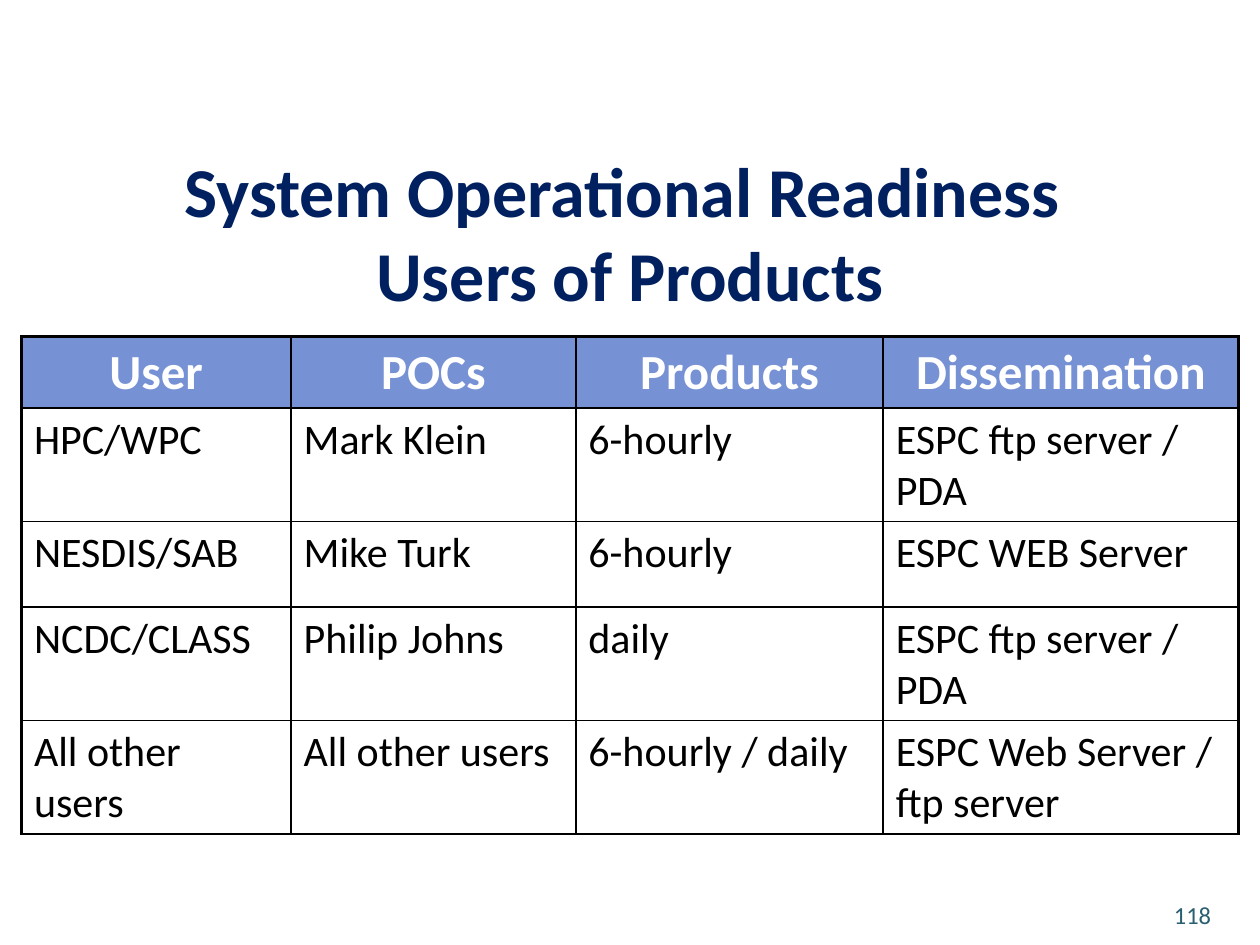
from dataclasses import dataclass

from lxml.etree import SubElement
from pptx import Presentation
from pptx.dml.color import RGBColor as RGB
from pptx.enum.text import MSO_ANCHOR as ANCHOR, PP_ALIGN as ALIGN
from pptx.oxml.ns import qn
from pptx.util import Inches, Pt


@dataclass(frozen=True)
class Theme:
    font: str = "Calibri"
    title: str = "002060"
    header_fill: str = "7691D4"
    header_text: str = "FFFFFF"
    body_text: str = "000000"
    border: str = "000000"
    number: str = "295F71"
    title_size: int = 40
    header_size: int = 28
    body_size: int = 24
    number_size: int = 14


theme = Theme()


def add_text(p, text, size, color, bold=False, align=ALIGN.LEFT):
    """Add one run per line of text, with line breaks between them."""
    p.alignment = align
    for i, line in enumerate(text.split("\n")):
        if i:
            p.add_line_break()
        r = p.add_run()
        r.text = line
        r.font.name, r.font.size, r.font.bold = theme.font, Pt(size), bold
        r.font.color.rgb = RGB.from_string(color)


def add_border(cell, side, width):
    """Draw one cell side (L, R, T or B); call before the fill is set."""
    ln = SubElement(cell._tc.get_or_add_tcPr(), qn(f"a:ln{side}"), w=str(Pt(width)))
    fill = SubElement(ln, qn("a:solidFill"))
    SubElement(fill, qn("a:srgbClr"), val=theme.border)


prs = Presentation()
prs.slide_width, prs.slide_height = Inches(10), Inches(7.5)
s = prs.slides.add_slide(prs.slide_layouts[6])

# Title
sp = s.shapes.add_textbox(0, Inches(1.17), prs.slide_width, Inches(1.33))
tf = sp.text_frame
tf.word_wrap, tf.vertical_anchor = True, ANCHOR.MIDDLE
add_text(tf.paragraphs[0], "System Operational Readiness \nUsers of Products",
         theme.title_size, theme.title, True, ALIGN.CENTER)

# Table of users
rows = [
    ("User", "POCs", "Products", "Dissemination"),
    ("HPC/WPC", "Mark Klein", "6-hourly", "ESPC ftp server / PDA"),
    ("NESDIS/SAB", "Mike Turk", "6-hourly", "ESPC WEB Server"),
    ("NCDC/CLASS", "Philip Johns", "daily", "ESPC ftp server / PDA"),
    ("All other users", "All other users", "6-hourly / daily",
     "ESPC Web Server / ftp server"),
]
col_widths = [2.14, 2.26, 2.44, 2.82]
row_heights = [0.51, 0.72, 0.68, 0.68, 0.68]
last_col = len(col_widths) - 1

table = s.shapes.add_table(len(rows), len(col_widths), Inches(0.17), Inches(2.67),
                           Inches(sum(col_widths)), Inches(sum(row_heights))).table
table.first_row = table.horz_banding = False
for column, width in zip(table.columns, col_widths):
    column.width = Inches(width)

for i, (values, height) in enumerate(zip(rows, row_heights)):
    table.rows[i].height = Inches(height)
    for j, value in enumerate(values):
        cell = table.cell(i, j)
        add_border(cell, "L", 2 if j == 0 else 1)
        add_border(cell, "R", 2 if j == last_col else 1)
        add_border(cell, "T", 2 if i == 0 else 1)
        add_border(cell, "B", 1)
        p = cell.text_frame.paragraphs[0]
        if i == 0:
            cell.fill.solid()
            cell.fill.fore_color.rgb = RGB.from_string(theme.header_fill)
            add_text(p, value, theme.header_size, theme.header_text, True, ALIGN.CENTER)
        else:
            cell.fill.background()
            add_text(p, value, theme.body_size, theme.body_text)

# Slide number
sp = s.shapes.add_textbox(Inches(9.05), Inches(7.06), Inches(0.83), Inches(0.4))
tf = sp.text_frame
tf.word_wrap, tf.vertical_anchor = True, ANCHOR.MIDDLE
tf.margin_left = tf.margin_right = tf.margin_top = tf.margin_bottom = 0
add_text(tf.paragraphs[0], "118", theme.number_size, theme.number, align=ALIGN.CENTER)

prs.save("out.pptx")
